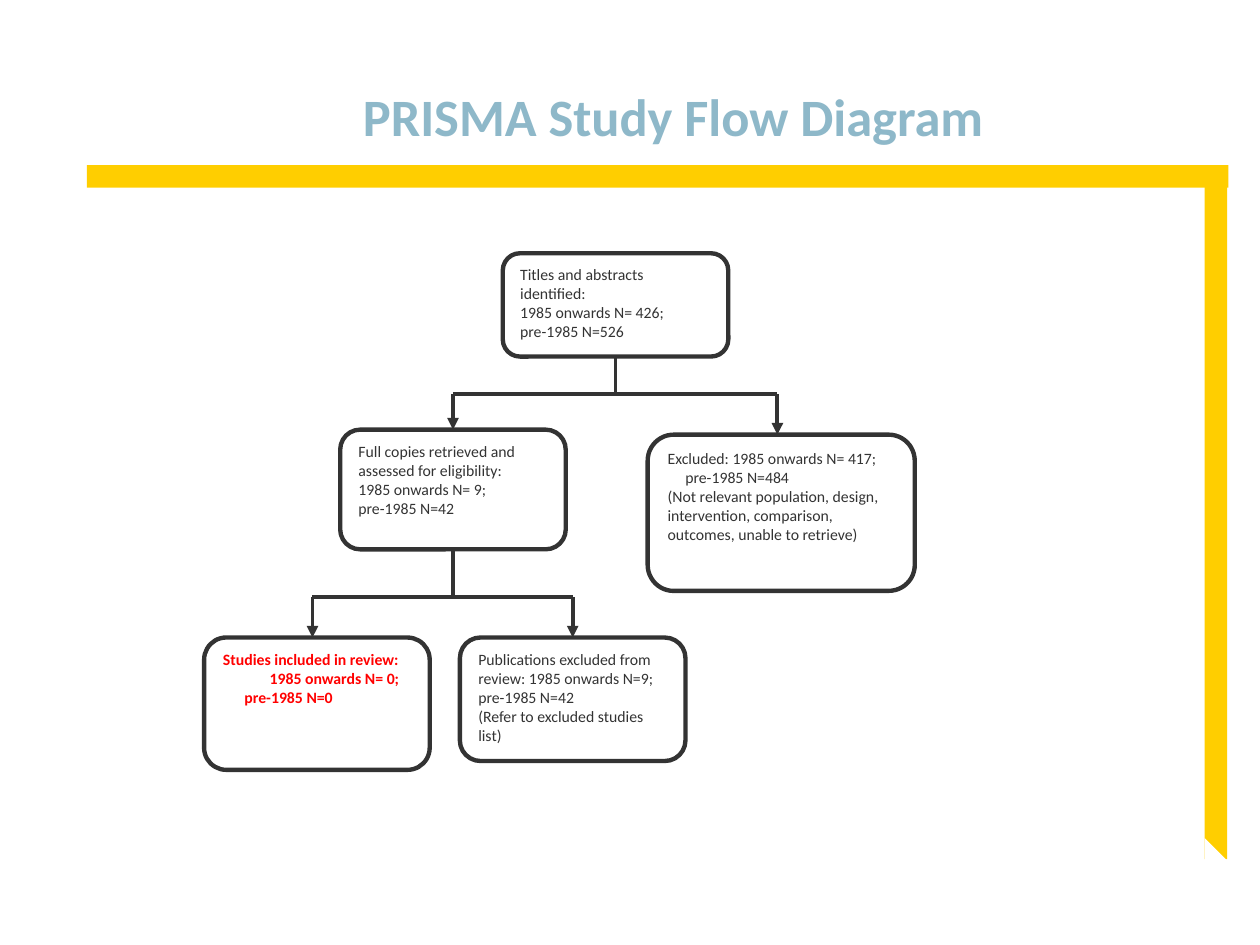
from lxml.etree import SubElement
from pptx import Presentation
from pptx.dml.color import RGBColor
from pptx.enum.shapes import MSO_CONNECTOR, MSO_SHAPE
from pptx.enum.text import MSO_ANCHOR, MSO_AUTO_SIZE, PP_ALIGN
from pptx.oxml.ns import qn
from pptx.util import Inches, Pt

YELLOW = RGBColor(0xFF, 0xCE, 0x00)
WHITE = RGBColor(0xFF, 0xFF, 0xFF)
DARK = RGBColor(0x33, 0x33, 0x33)
RED = RGBColor(0xFF, 0x00, 0x00)
PALE_BLUE = RGBColor(0x8E, 0xB8, 0xC9)


def write(tf, lines, size=9, color=DARK, bold=False, anchor=MSO_ANCHOR.TOP,
          spacing=None):
    """Fill a text frame; each line is a text or a (text, left indent) pair."""
    tf.word_wrap = True
    tf.auto_size = MSO_AUTO_SIZE.NONE
    tf.vertical_anchor = anchor
    for i, line in enumerate(lines):
        text, indent = line if isinstance(line, tuple) else (line, 0)
        p = tf.paragraphs[0] if i == 0 else tf.add_paragraph()
        p.alignment = PP_ALIGN.LEFT
        if spacing:
            p.line_spacing = spacing
        pPr = p._p.get_or_add_pPr()
        pPr.set("marL", str(Inches(indent)))
        pPr.set("indent", "0")
        r = p.add_run()
        r.text = text
        r.font.name = "Calibri"
        r.font.size = Pt(size)
        r.font.bold = bold
        r.font.color.rgb = color


class FlowSlide:
    def __init__(self, prs):
        self.s = prs.slides.add_slide(prs.slide_layouts[5])

    def title(self, text, x, y, w, h):
        sp = self.s.shapes.title
        sp.left, sp.top, sp.width, sp.height = map(Inches, (x, y, w, h))
        write(sp.text_frame, [(text, 0.26)], size=30, color=PALE_BLUE,
              bold=True, anchor=MSO_ANCHOR.BOTTOM, spacing=0.9)

    def shape(self, kind, x, y, w, h, fill=None):
        sp = self.s.shapes.add_shape(kind, *map(Inches, (x, y, w, h)))
        sp.shadow.inherit = False
        sp.line.fill.background()
        if fill is None:
            sp.fill.background()
        else:
            sp.fill.solid()
            sp.fill.fore_color.rgb = fill
        return sp

    def box(self, lines, x, y, w, h, fill=WHITE, **style):
        sp = self.shape(MSO_SHAPE.ROUNDED_RECTANGLE, x, y, w, h, fill)
        sp.line.color.rgb = DARK
        sp.line.width = Pt(2.5)
        write(sp.text_frame, lines, **style)
        return sp

    def line(self, x1, y1, x2, y2, arrow=False):
        c = self.s.shapes.add_connector(
            MSO_CONNECTOR.STRAIGHT, x1, y1, x2, y2)
        c.line.color.rgb = DARK
        c.line.width = Pt(2.25)
        if arrow:
            SubElement(c.line._get_or_add_ln(), qn("a:tailEnd"),
                       type="triangle")
        SubElement(c._element.spPr, qn("a:effectLst"))
        return c

    def branch(self, parent, children, bar_y):
        """Join parent to (box, arrow x) children; x None means box centre."""
        bar_y = Inches(bar_y)
        ends = []
        for child, x in children:
            center = child.left + child.width // 2
            end = center if x is None else Inches(x)
            c = self.line(end, bar_y, end, child.top, arrow=True)
            if x is None:
                c.end_connect(child, 0)
            ends.append(end)
        self.line(min(ends), bar_y, max(ends), bar_y)
        mid = parent.left + parent.width // 2
        c = self.line(mid, parent.top + parent.height, mid, bar_y)
        c.begin_connect(parent, 2)


def main():
    prs = Presentation()
    prs.slide_width, prs.slide_height = Inches(10), Inches(7.5)
    fs = FlowSlide(prs)

    fs.shape(MSO_SHAPE.RECTANGLE, 0.69, 1.31, 9.06, 0.18, YELLOW)
    fs.shape(MSO_SHAPE.RECTANGLE, 9.56, 1.31, 0.18, 5.51, YELLOW)
    corner = fs.shape(MSO_SHAPE.ISOSCELES_TRIANGLE, 9.56, 6.65, 0.18, 0.18,
                      WHITE)
    corner.adjustments[0] = 0
    fs.title("PRISMA Study Flow Diagram", 2.52, 0.18, 7.23, 1.04)

    identified = fs.box(
        ["Titles and abstracts identified:", "1985 onwards N= 426;",
         "pre-1985 N=526"], 3.99, 2.01, 1.79, 0.82)
    retrieved = fs.box(
        ["Full copies retrieved and assessed for eligibility:",
         "1985 onwards N= 9;", "pre-1985 N=42"],
        2.7, 3.41, 1.79, 0.95, fill=None)
    excluded = fs.box(
        ["Excluded: 1985 onwards N= 417;", ("pre-1985 N=484", 0.14),
         "(Not relevant population, design, intervention, comparison, "
         "outcomes, unable to retrieve)"],
        5.14, 3.45, 2.12, 1.24, fill=None)
    included = fs.box(
        ["Studies included in review:", ("1985 onwards N= 0;", 0.37),
         ("pre-1985 N=0", 0.17)],
        1.62, 5.06, 1.79, 1.05, color=RED, bold=True)
    publications = fs.box(
        ["Publications excluded from review: 1985 onwards N=9; "
         "pre-1985 N=42", "(Refer to excluded studies list)"],
        3.65, 5.06, 1.79, 0.98)

    fs.branch(identified, [(retrieved, None), (excluded, 6.17)], 3.13)
    fs.branch(retrieved, [(included, 2.48), (publications, None)], 4.74)
    prs.save("out.pptx")


if __name__ == "__main__":
    main()
